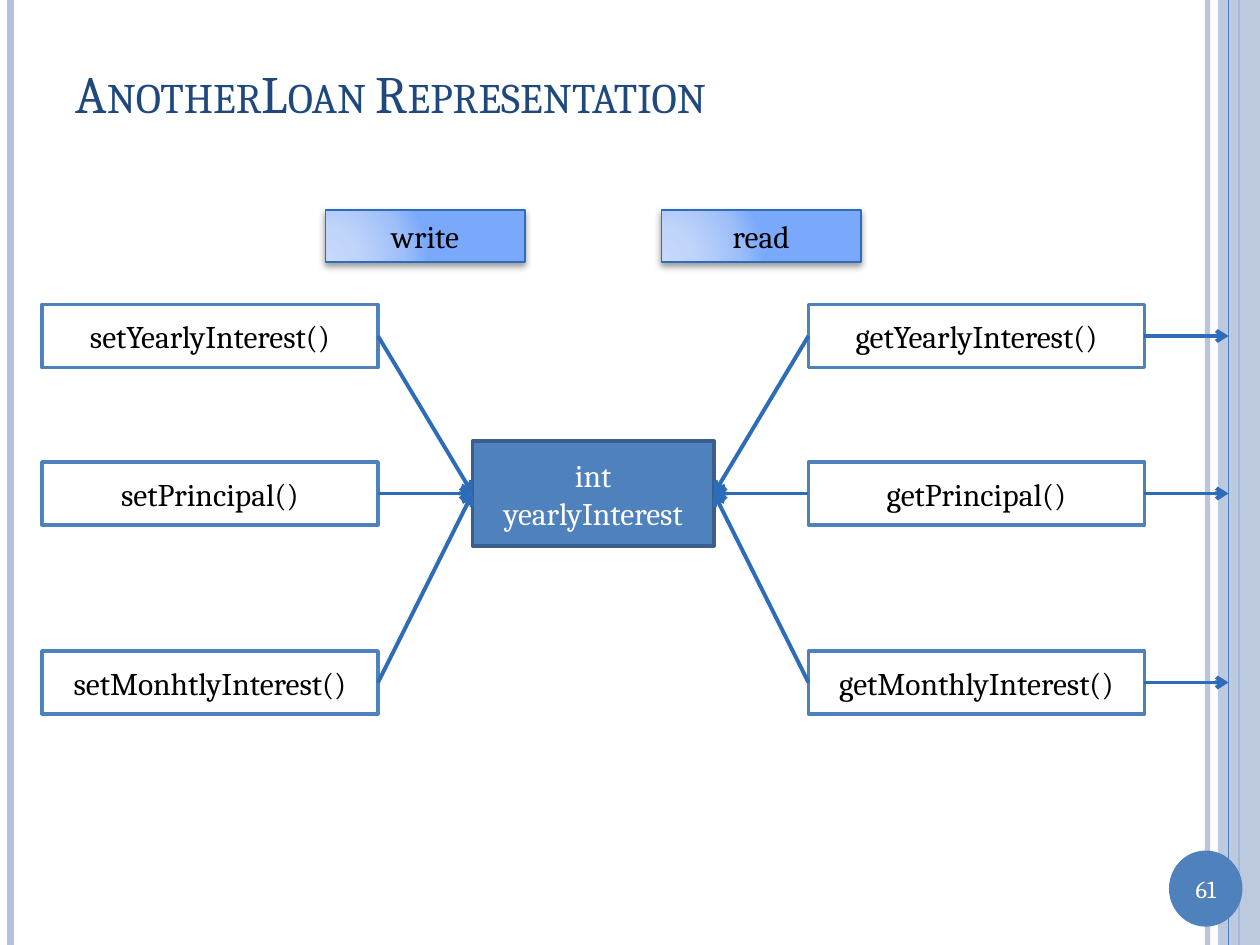
import pptx
import pptx.dml.color
import pptx.enum.shapes
import pptx.enum.text
import pptx.oxml
import pptx.oxml.ns
import pptx.util

Pt = pptx.util.Pt
RGBColor = pptx.dml.color.RGBColor
qn = pptx.oxml.ns.qn
SHAPES = pptx.enum.shapes.MSO_SHAPE
ALIGN = pptx.enum.text.PP_ALIGN
MIDDLE = pptx.enum.text.MSO_ANCHOR.MIDDLE

WHITE = RGBColor(0xFF, 0xFF, 0xFF)
BLACK = RGBColor(0, 0, 0)
NAVY = RGBColor(0x1F, 0x49, 0x7D)
BLUE = RGBColor(0x4F, 0x81, 0xBD)
DARK_BLUE = RGBColor(0x3A, 0x5F, 0x8C)
ARROW_BLUE = RGBColor(0x2C, 0x6C, 0xB9)
PALE_BLUE = RGBColor(0xB3, 0xC1, 0xDB)

NAMESPACE = 'xmlns:a="http://schemas.openxmlformats.org/drawingml/2006/main"'
LABEL_GRADIENT = f"""<a:gradFill {NAMESPACE} rotWithShape="1"><a:gsLst>
<a:gs pos="0"><a:srgbClr val="C7D8FB"/></a:gs>
<a:gs pos="30000"><a:srgbClr val="C1D5FA"/></a:gs>
<a:gs pos="75000"><a:srgbClr val="9FBFF9"/></a:gs>
<a:gs pos="100000"><a:srgbClr val="7AA9FB"/></a:gs></a:gsLst>
<a:path path="circle"><a:fillToRect l="5000" t="100000" r="120000" b="10000"/></a:path>
</a:gradFill>"""
LABEL_SHADOW = f"""<a:outerShdw {NAMESPACE} blurRad="50800" dist="25400" dir="5400000"
rotWithShape="0"><a:srgbClr val="000000"><a:alpha val="40000"/></a:srgbClr></a:outerShdw>"""

presentation = pptx.Presentation()
presentation.slide_width, presentation.slide_height = Pt(720), Pt(540)
slide = presentation.slides.add_slide(presentation.slide_layouts[6])


def add_line(start, end, color, width, arrow=False):
    connector = slide.shapes.add_connector(
        pptx.enum.shapes.MSO_CONNECTOR.STRAIGHT, *map(Pt, start + end))
    connector.line.color.rgb = color
    connector.line.width = Pt(width)
    properties = connector.element.spPr
    if arrow:
        properties.find(qn("a:ln")).append(
            pptx.oxml.parse_xml(f'<a:tailEnd {NAMESPACE} type="arrow"/>'))
    properties.append(pptx.oxml.parse_xml(f"<a:effectLst {NAMESPACE}/>"))
    return connector


def add_box(bounds, lines, fill, line_color, line_width, text_color=BLACK, kind=SHAPES.RECTANGLE):
    """Add a shape with centred text; without a line colour it has no outline."""
    shape = slide.shapes.add_shape(kind, *map(Pt, bounds))
    shape.shadow.inherit = False
    shape.fill.solid()
    shape.fill.fore_color.rgb = fill
    if line_color is None:
        shape.line.fill.background()
    else:
        shape.line.color.rgb = line_color
        shape.line.width = Pt(line_width)
    frame = shape.text_frame
    frame.word_wrap = True
    frame.vertical_anchor = MIDDLE
    for index, text in enumerate(lines):
        paragraph = frame.add_paragraph() if index else frame.paragraphs[0]
        paragraph.alignment = ALIGN.CENTER
        run = paragraph.add_run()
        run.text = text
        run.font.name = "Cambria"
        run.font.size = Pt(18)
        run.font.color.rgb = text_color
    return shape


# Side decoration
right_rule = add_line((690, 0), (690, 540), PALE_BLUE, 3)
add_line((6, 0), (6, 540), PALE_BLUE, 4.5)
add_line((708, 0), (708, 540), BLUE, 1.5)
band = add_box((696, 0, 24, 540), [], PALE_BLUE, None, 0)
for decoration, alpha in ((right_rule, 93000), (band, 87000)):
    color = next(decoration.element.spPr.iter(qn("a:srgbClr")))
    color.append(pptx.oxml.parse_xml(f'<a:alpha {NAMESPACE} val="{alpha}"/>'))
add_line((702, 0), (702, 540), BLUE, 0.75)
add_box((668, 486, 42, 43.5), [], BLUE, None, 0, kind=SHAPES.OVAL)

# Page number and title
for bounds, text, size, color, alignment in (
    ((668, 495.5, 42, 24.5), "61", 14, WHITE, ALIGN.CENTER),
    ((36, 21.5, 624, 63), "AnotherLoan Representation", 30, NAVY, ALIGN.LEFT),
):
    text_box = slide.shapes.add_textbox(*map(Pt, bounds))
    frame = text_box.text_frame
    frame.word_wrap = True
    frame.vertical_anchor = MIDDLE
    paragraph = frame.paragraphs[0]
    paragraph.alignment = alignment
    run = paragraph.add_run()
    run.text = text
    run.font.name = "Cambria"
    run.font.size = Pt(size)
    run.font.color.rgb = color
run.font._element.set("cap", "small")

# Field in the middle, setters on its left, getters on its right
FIELD_LEFT, FIELD_RIGHT, FIELD_MIDDLE = 270, 408, 282
METHOD_WIDTH, METHOD_HEIGHT = 192, 36
SETTER_LEFT, GETTER_LEFT, OUTPUT_END = 24, 462, 702

add_box((FIELD_LEFT, 252, FIELD_RIGHT - FIELD_LEFT, 60), ["int", "yearlyInterest"],
        BLUE, DARK_BLUE, 2, WHITE)

for middle, setter, getter in (
    (192, "setYearlyInterest()", "getYearlyInterest()"),
    (282, "setPrincipal()", "getPrincipal()"),
    (390, "setMonhtlyInterest()", "getMonthlyInterest()"),
):
    for left, method in ((SETTER_LEFT, setter), (GETTER_LEFT, getter)):
        add_box((left, middle - METHOD_HEIGHT / 2, METHOD_WIDTH, METHOD_HEIGHT),
                [method], WHITE, BLUE, 2)
    for start, end in (
        ((SETTER_LEFT + METHOD_WIDTH, middle), (FIELD_LEFT, FIELD_MIDDLE)),
        ((GETTER_LEFT, middle), (FIELD_RIGHT, FIELD_MIDDLE)),
        ((GETTER_LEFT + METHOD_WIDTH, middle), (OUTPUT_END, middle)),
    ):
        add_line(start, end, ARROW_BLUE, 2.25, arrow=True)

# Column labels
for left, label in ((186, "write"), (378, "read")):
    shape = add_box((left, 120, 114, 30), [label], WHITE, ARROW_BLUE, 1)
    properties = shape.element.spPr
    properties.replace(properties.find(qn("a:solidFill")), pptx.oxml.parse_xml(LABEL_GRADIENT))
    properties.find(qn("a:effectLst")).append(pptx.oxml.parse_xml(LABEL_SHADOW))

presentation.save("out.pptx")
